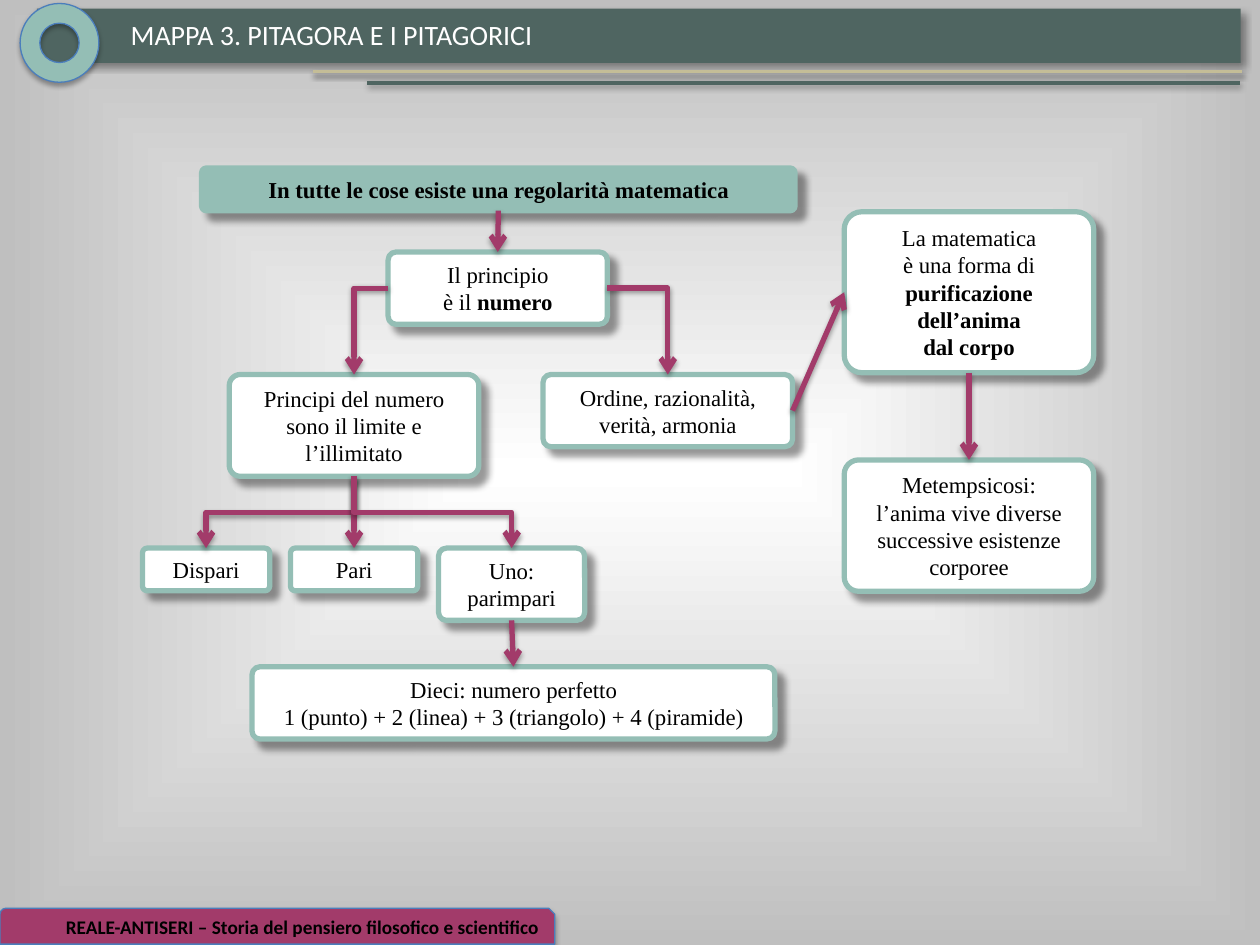
from lxml import etree
from pptx import Presentation
from pptx.dml.color import RGBColor
from pptx.enum.shapes import MSO_CONNECTOR, MSO_SHAPE
from pptx.enum.text import MSO_ANCHOR, MSO_AUTO_SIZE, PP_ALIGN
from pptx.oxml import parse_xml
from pptx.oxml.ns import nsdecls, qn
from pptx.util import Pt

RECTANGLE, ROUNDED = MSO_SHAPE.RECTANGLE, MSO_SHAPE.ROUNDED_RECTANGLE
SNIPPED, DONUT = MSO_SHAPE.SNIP_ROUND_RECTANGLE, MSO_SHAPE.DONUT
STRAIGHT, ELBOW = MSO_CONNECTOR.STRAIGHT, MSO_CONNECTOR.ELBOW
LEFT, CENTER, RIGHT = PP_ALIGN.LEFT, PP_ALIGN.CENTER, PP_ALIGN.RIGHT
TOP, MIDDLE = MSO_ANCHOR.TOP, MSO_ANCHOR.MIDDLE
FIT_SHAPE = MSO_AUTO_SIZE.SHAPE_TO_FIT_TEXT

SLATE, SAGE, PLUM, SAND = "4F6561", "94BEB5", "A23B6A", "C4BD97"
BLUE, WHITE, BLACK, GREY = "4B7EBC", "FFFFFF", "000000", "BFBFBF"

BAR_SHADOW = (40, 4, 3, 45)
NODE_SHADOW = (40, 4, 6, 45)
BADGE_SHADOW = (35, 3.1, 1.8, 90)
LINE_SHADOW = (38, 3.1, 1.6, 90)

SITE_TOP, SITE_LEFT, SITE_BOTTOM, SITE_RIGHT = range(4)
TURNS = {
    ("bentConnector2", True): (180, "flipV"),
    ("bentConnector2", False): (0, None),
    ("bentConnector3", True): (90, None),
    ("bentConnector3", False): (270, "flipH"),
}


def rgb(value):
    return RGBColor.from_string(value)


def apply(target, **values):
    for key, value in values.items():
        setattr(target, key, value)


def style_font(font, color, **values):
    apply(font, **values)
    font.color.rgb = rgb(color)


def style_line(line, color, width):
    line.color.rgb = rgb(color)
    line.width = Pt(width)


def add_shadow(shape, opacity, blur, distance, angle):
    shape.element.spPr.append(parse_xml(
        f'<a:effectLst {nsdecls("a")}><a:outerShdw blurRad="{Pt(blur)}" '
        f'dist="{Pt(distance)}" dir="{angle * 60000}" algn="ctr" rotWithShape="0">'
        f'<a:srgbClr val="{BLACK}"><a:alpha val="{opacity * 1000}"/></a:srgbClr>'
        '</a:outerShdw></a:effectLst>'))


def add_block(slide, kind, box, fill, shadow, border=None):
    block = slide.shapes.add_shape(kind, *map(Pt, box))
    block.fill.solid()
    block.fill.fore_color.rgb = rgb(fill)
    if border:
        style_line(block.line, *border)
    else:
        block.line.fill.background()
    add_shadow(block, *shadow)
    return block


def add_background(slide):
    slide.background.fill.gradient()
    gradient = slide.element.find(".//" + qn("a:gradFill"))
    stops = "".join(
        f'<a:gs pos="{position}"><a:srgbClr val="{color}"/></a:gs>'
        for position, color in ((0, WHITE), (100000, GREY)))
    gradient.getparent().replace(gradient, parse_xml(
        f'<a:gradFill {nsdecls("a")} rotWithShape="1"><a:gsLst>{stops}</a:gsLst>'
        '<a:path path="shape"><a:fillToRect l="50000" t="50000" r="50000" b="50000"/>'
        '</a:path></a:gradFill>'))


def add_header(slide, box):
    left, top, width, _ = box
    add_block(slide, RECTANGLE, (left + 21, top + 5, width - 32, 31), SLATE, BAR_SHADOW)
    for start, end, drop, color in ((179, 710, 41, SAND), (210, 708.5, 47.5, SLATE)):
        rule = slide.shapes.add_connector(
            STRAIGHT, *map(Pt, (left + start, top + drop, left + end, top + drop)))
        style_line(rule.line, color, 2)
        add_shadow(rule, *LINE_SHADOW)

    title = slide.shapes.title
    apply(title, left=Pt(left + 67.5), top=Pt(top + 6.5), width=Pt(251), height=Pt(26.6))
    title.text = "MAPPA 3. PITAGORA E I PITAGORICI"
    apply(title.text_frame, vertical_anchor=TOP, word_wrap=False, auto_size=FIT_SHAPE)
    heading = title.text_frame.paragraphs[0]
    heading.alignment = LEFT
    style_font(heading.runs[0].font, WHITE, name="Calibri", size=Pt(16))
    slide.shapes.element.append(title.element)

    add_block(slide, DONUT, (left + 11.5, top + 2, 45, 45), SAGE, BADGE_SHADOW, (BLUE, 0.75))


def add_footer(slide, box):
    footer = add_block(slide, SNIPPED, box, PLUM, BADGE_SHADOW, (BLUE, 0.75))
    footer.text_frame.vertical_anchor = MIDDLE
    credit = footer.text_frame.paragraphs[0]
    credit.alignment = RIGHT
    credit.text = "REALE-ANTISERI – Storia del pensiero filosofico e scientifico"
    style_font(credit.runs[0].font, BLACK, name="Calibri", size=Pt(11), bold=True)


def add_node(slide, left, top, width, lines, fill=WHITE):
    height = 7.5 + 16.9 * len(lines)
    node = add_block(slide, ROUNDED, (left, top, width, height), fill,
                     NODE_SHADOW, (SAGE, 3))
    node.adjustments[0] = 0.11
    apply(node.text_frame, vertical_anchor=MIDDLE, word_wrap=True, auto_size=FIT_SHAPE)
    paragraph = node.text_frame.paragraphs[0]
    paragraph.alignment = CENTER
    for number, line in enumerate(lines):
        if number:
            paragraph.add_line_break()
        for part, words in enumerate(line.split("*")):
            if words:
                run = paragraph.add_run()
                run.text = words
                style_font(run.font, BLACK, name="Times New Roman", size=Pt(13),
                           bold=part % 2 == 1)
    return node


def bend(link, preset):
    start_x, start_y, end_x, end_y = link.begin_x, link.begin_y, link.end_x, link.end_y
    across, down = abs(end_x - start_x), abs(end_y - start_y)
    width, height = (down, across) if preset == "bentConnector3" else (across, down)
    apply(link, left=(start_x + end_x - width) // 2, top=(start_y + end_y - height) // 2,
          width=width, height=height)
    angle, flip = TURNS[preset, end_x < start_x]
    frame = link.element.spPr.find(qn("a:xfrm"))
    for name in ("flipH", "flipV"):
        frame.attrib.pop(name, None)
    frame.set("rot", str(angle * 60000))
    if flip:
        frame.set(flip, "1")
    link.element.spPr.find(qn("a:prstGeom")).set("prst", preset)


def add_link(slide, source, source_site, target, target_site, preset=None):
    link = slide.shapes.add_connector(ELBOW if preset else STRAIGHT, 0, 0, 0, 0)
    link.begin_connect(source, source_site)
    link.end_connect(target, target_site)
    if preset:
        bend(link, preset)
    style_line(link.line, PLUM, 3)
    etree.SubElement(link.line._get_or_add_ln(), qn("a:tailEnd"), type="arrow")
    add_shadow(link, *LINE_SHADOW)


def add_concept_map(slide, box):
    left, top, _, _ = box
    nodes = {}
    for key, x, y, width, lines in (
        ("number", 140.8, 48, 125.3, ("Il principio", "è il *numero*")),
        ("limits", 50, 118, 142.6,
         ("Principi del numero", "sono il limite e", "l’illimitato")),
        ("order", 229.3, 118, 142.6, ("Ordine, razionalità,", "verità, armonia")),
        ("odd", 0.4, 217.2, 72.7, ("Dispari",)),
        ("even", 85, 217.2, 72.7, ("Pari",)),
        ("one", 169.6, 217.2, 83.5, ("Uno:", "parimpari")),
        ("ten", 63, 285, 298.8,
         ("Dieci: numero perfetto", "1 (punto) + 2 (linea) + 3 (triangolo) + 4 (piramide)")),
        ("soul", 401.4, 25, 142.6,
         ("La matematica", "è una forma di", "*purificazione*", "*dell’anima*", "*dal corpo*")),
        ("rebirth", 401.4, 166.8, 142.6,
         ("Metempsicosi:", "l’anima vive diverse", "successive esistenze", "corporee")),
    ):
        nodes[key] = add_node(slide, left + x, top + y, width, lines)
    nodes["thesis"] = add_node(slide, left + 34.2, top, 339.1,
                               ("*In tutte le cose esiste una regolarità matematica*",), SAGE)

    for source, source_site, target, target_site, preset in (
        ("number", SITE_LEFT, "limits", SITE_TOP, "bentConnector2"),
        ("number", SITE_RIGHT, "order", SITE_TOP, "bentConnector2"),
        ("limits", SITE_BOTTOM, "odd", SITE_TOP, "bentConnector3"),
        ("limits", SITE_BOTTOM, "even", SITE_TOP, "bentConnector3"),
        ("limits", SITE_BOTTOM, "one", SITE_TOP, "bentConnector3"),
        ("one", SITE_BOTTOM, "ten", SITE_TOP, None),
        ("order", SITE_RIGHT, "soul", SITE_LEFT, None),
        ("soul", SITE_BOTTOM, "rebirth", SITE_TOP, None),
        ("thesis", SITE_BOTTOM, "number", SITE_TOP, None),
    ):
        add_link(slide, nodes[source], source_site, nodes[target], target_site, preset)


def main():
    deck = Presentation()
    apply(deck, slide_width=Pt(720), slide_height=Pt(540))
    slide = deck.slides.add_slide(deck.slide_layouts[5])
    add_background(slide)
    add_footer(slide, (0, 519, 317, 20.5))
    add_concept_map(slide, (81, 96, 544, 326))
    add_header(slide, (0, 0, 720, 48))
    deck.save("out.pptx")


if __name__ == "__main__":
    main()
